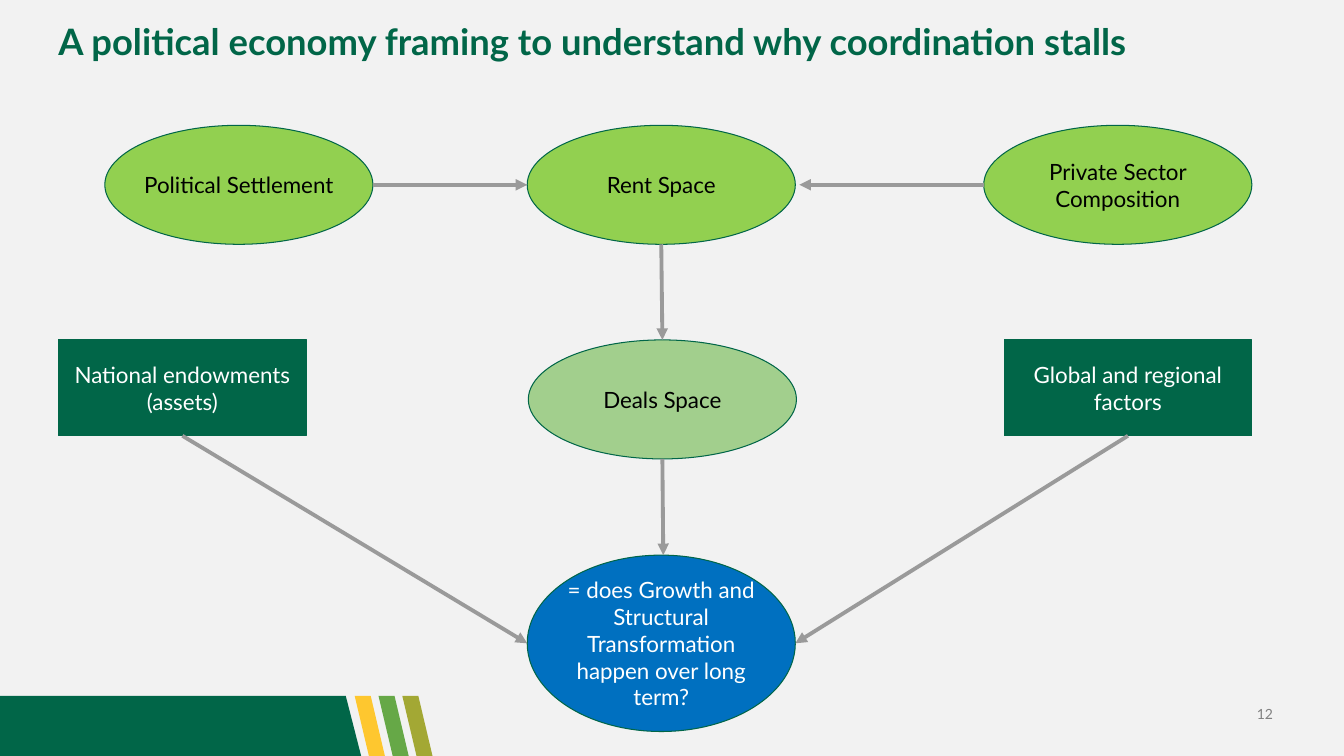
import pptx
import pptx.dml.color
import pptx.enum.shapes
import pptx.enum.text
import pptx.oxml.ns
import pptx.util
from lxml import etree

Pt = pptx.util.Pt
RGBColor = pptx.dml.color.RGBColor
MSO_SHAPE = pptx.enum.shapes.MSO_SHAPE
PP_ALIGN = pptx.enum.text.PP_ALIGN
MSO_ANCHOR = pptx.enum.text.MSO_ANCHOR
qn = pptx.oxml.ns.qn

BACKGROUND = RGBColor(0xF2, 0xF2, 0xF2)
DARK_GREEN = RGBColor(0x01, 0x66, 0x48)
LIME = RGBColor(0x92, 0xD0, 0x50)
PALE_GREEN = RGBColor(0xA2, 0xCF, 0x8D)
BLUE = RGBColor(0x00, 0x70, 0xC0)
YELLOW = RGBColor(0xFE, 0xC7, 0x2F)
MID_GREEN = RGBColor(0x66, 0xA8, 0x47)
OLIVE = RGBColor(0xA3, 0xA8, 0x34)
ARROW_GREY = RGBColor(0x9A, 0x9A, 0x9A)
NUMBER_GREY = RGBColor(0x80, 0x80, 0x80)
BLACK = RGBColor(0, 0, 0)
WHITE = RGBColor(0xFF, 0xFF, 0xFF)

SLIDE_W, SLIDE_H = 960, 540
OVAL_W, OVAL_H = 191.5, 85
BOX_W, BOX_H = 177, 68.5
TOP_Y, MIDDLE_Y, RESULT_Y = 89.5, 242.8, 396.5
CENTRE_X = 376.6
RIGHT_EDGE = 894.2
FOOTER_Y = 497


def write(tf, text, size=16, color=BLACK, bold=False, align=PP_ALIGN.CENTER,
          anchor=MSO_ANCHOR.MIDDLE, spacing=None):
    tf.word_wrap = True
    tf.margin_left = tf.margin_right = tf.margin_top = tf.margin_bottom = 0
    tf.vertical_anchor = anchor
    p = tf.paragraphs[0]
    p.alignment = align
    p.line_spacing = spacing
    r = p.add_run()
    r.text = text
    r.font.name = "Lato"
    r.font.size = Pt(size)
    r.font.bold = bold
    r.font.color.rgb = color


def edge(sp, fx, fy):
    """Return the point at fractions fx, fy of a shape's frame, in points."""
    return (sp.left + fx * sp.width) / Pt(1), (sp.top + fy * sp.height) / Pt(1)


class Deck:
    def __init__(self):
        self.prs = pptx.Presentation()
        self.prs.slide_width, self.prs.slide_height = Pt(SLIDE_W), Pt(SLIDE_H)
        self.slide = self.prs.slides.add_slide(self.prs.slide_layouts[6])
        fill = self.slide.background.fill
        fill.solid()
        fill.fore_color.rgb = BACKGROUND

    def paint(self, sp, fill, line=None):
        sp.shadow.inherit = False
        sp.fill.solid()
        sp.fill.fore_color.rgb = fill
        if line is None:
            sp.line.fill.background()
        else:
            sp.line.color.rgb = line
            sp.line.width = Pt(0.75)

    def text(self, x, y, w, h, text, **style):
        sp = self.slide.shapes.add_textbox(Pt(x), Pt(y), Pt(w), Pt(h))
        write(sp.text_frame, text, **style)

    def node(self, kind, x, y, w, h, text, fill, color=BLACK):
        sp = self.slide.shapes.add_shape(kind, Pt(x), Pt(y), Pt(w), Pt(h))
        self.paint(sp, fill, DARK_GREEN)
        write(sp.text_frame, text, color=color)
        return sp

    def oval(self, x, y, text, fill=LIME, color=BLACK, h=OVAL_H):
        return self.node(MSO_SHAPE.OVAL, x, y, OVAL_W, h, text, fill, color)

    def box(self, x, text):
        return self.node(MSO_SHAPE.RECTANGLE, x, MIDDLE_Y, BOX_W, BOX_H, text,
                         DARK_GREEN, WHITE)

    def arrow(self, start, end):
        points = [Pt(v) for v in (*start, *end)]
        line = self.slide.shapes.add_connector(
            pptx.enum.shapes.MSO_CONNECTOR.STRAIGHT, *points)
        line.line.color.rgb = ARROW_GREY
        line.line.width = Pt(2.75)
        etree.SubElement(line.line._get_or_add_ln(), qn("a:tailEnd"), type="triangle")
        etree.SubElement(line._element.spPr, qn("a:effectLst"))

    def band(self, points, fill):
        builder = self.slide.shapes.build_freeform(*points[0], scale=Pt(1))
        builder.add_line_segments(points[1:], close=True)
        self.paint(builder.convert_to_shape(), fill)

    def stripe(self, x, fill):
        sp = self.slide.shapes.add_shape(
            MSO_SHAPE.PARALLELOGRAM, Pt(x), Pt(FOOTER_Y), Pt(21.6), Pt(SLIDE_H - FOOTER_Y))
        sp.adjustments[0] = 0.47
        sp._element.spPr.xfrm.set("flipH", "1")
        self.paint(sp, fill)


def main():
    deck = Deck()

    deck.text(879, 504, 30.3, 12.2, "12", size=10, color=NUMBER_GREY,
              align=PP_ALIGN.RIGHT, anchor=MSO_ANCHOR.BOTTOM)
    deck.band([(0, FOOTER_Y), (247, FOOTER_Y), (257.8, SLIDE_H), (0, SLIDE_H)], DARK_GREEN)
    for i, color in enumerate((YELLOW, MID_GREEN, OLIVE)):
        deck.stripe(253.4 + 17 * i, color)
    deck.text(41.8, 18, 861, 26, "A political economy framing to understand why coordination stalls",
              size=26, color=DARK_GREEN, bold=True, align=PP_ALIGN.LEFT, spacing=0.9)

    endowments = deck.box(41.8, "National endowments (assets)")
    factors = deck.box(RIGHT_EDGE - BOX_W, "Global and regional factors")
    settlement = deck.oval(74.9, TOP_Y, "Political Settlement")
    rent = deck.oval(CENTRE_X, TOP_Y, "Rent Space")
    private = deck.oval(RIGHT_EDGE - OVAL_W, TOP_Y, "Private Sector Composition")
    deals = deck.oval(CENTRE_X + 0.8, MIDDLE_Y, "Deals Space", PALE_GREEN)
    result = deck.oval(
        CENTRE_X, RESULT_Y,
        "= does Growth and Structural Transformation happen over long term?",
        BLUE, WHITE, h=126)

    left, right, top, bottom = (0, 0.5), (1, 0.5), (0.5, 0), (0.5, 1)
    private_x, private_y = edge(private, *left)
    deck.arrow(edge(settlement, *right), edge(rent, *left))
    deck.arrow((private_x, private_y), (571, private_y))
    deck.arrow(edge(rent, *bottom), edge(deals, *top))
    deck.arrow(edge(deals, *bottom), (473.8, RESULT_Y))
    deck.arrow(edge(endowments, *bottom), edge(result, *left))
    deck.arrow(edge(factors, *bottom), edge(result, *right))

    deck.prs.save("out.pptx")


if __name__ == "__main__":
    main()
